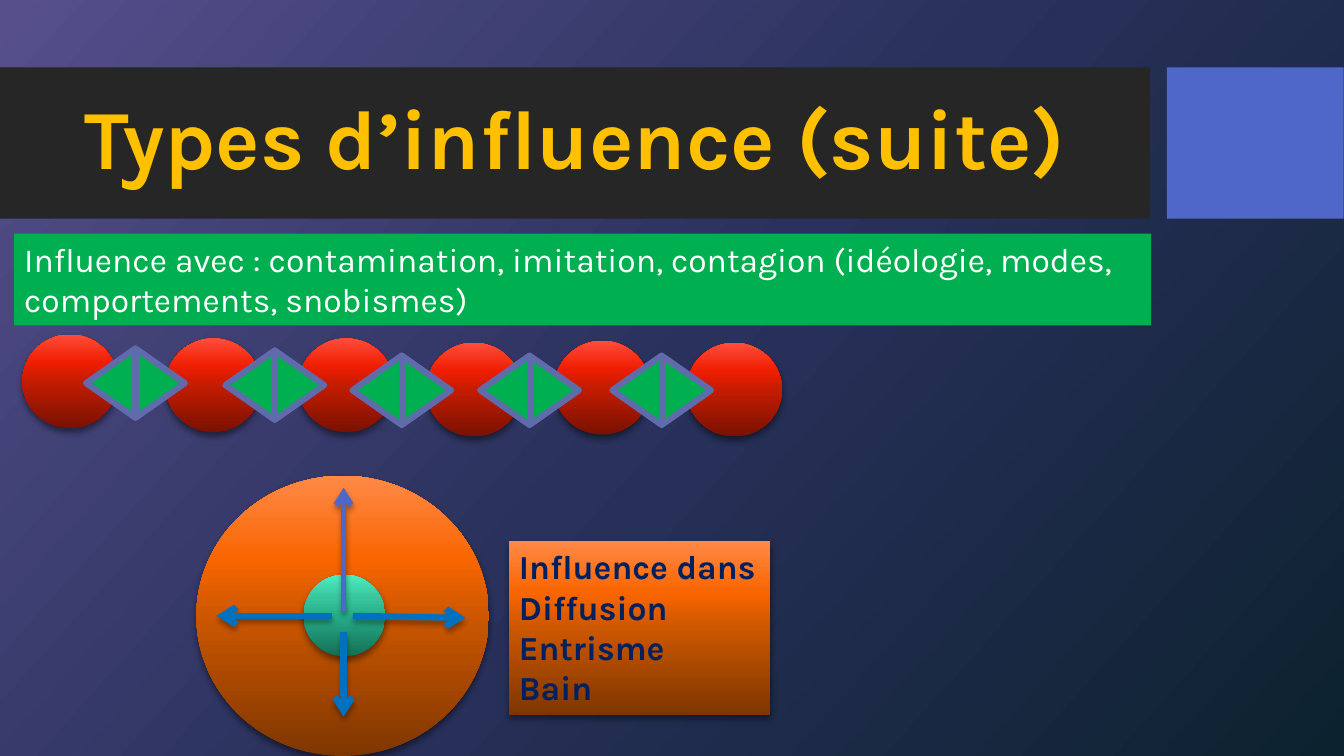
from lxml import etree
from pptx import Presentation
from pptx import util as u
from pptx.dml.color import RGBColor
from pptx.enum import shapes, text
from pptx.oxml import ns

FONT = "Karla"
TITLE = "Types d’influence (suite)"
CHAIN_TEXT = ["Influence avec : contamination, imitation, contagion "
              "(idéologie, modes, comportements, snobismes)"]
SPREAD_TEXT = ["Influence dans", "Diffusion", "Entrisme", "Bain"]

BACKDROP = [(0, "564F8C"), (50, "29315C"), (100, "0D222F")]
RED = [(0, "791100"), (50, "C41C00"), (70, "EF1D00"), (100, "FF4D3B")]
ORANGE = [(0, "7E3600"), (50, "CC5700"), (70, "F96500"), (100, "FF8947")]
TEAL = [(0, "156E56"), (50, "26AE88"), (70, "37C49D"), (100, "50ECBF")]

BANDS = [((0, 1.7, 28.98, 3.81), "262626"), ((29.41, 1.7, 4.45, 3.81), "4E67C8")]
PEOPLE = [(0.56, 8.43), (4.17, 8.53), (7.52, 8.53),
          (10.74, 8.64), (13.97, 8.59), (17.3, 8.64)]
EXCHANGES = [(2.54, 8.41), (6.05, 8.46), (9.25, 8.59), (12.47, 8.59), (15.8, 8.59)]
PERSON_SIZE = (2.41, 2.36)
EXCHANGE_SIZE = (1.75, 2.49)
ARROWS = [
    ((8.89, 15.52), (11.73, 15.57), "0070C0", 4.5),
    ((8.66, 15.93), (8.66, 18.06), "0070C0", 4.5),
    ((8.36, 15.52), (5.46, 15.52), "0070C0", 4.5),
    ((8.66, 15.39), (8.66, 12.29), "4E67C8", 4),
]
KIND = shapes.MSO_SHAPE


def cm(values):
    return [u.Cm(value) for value in values]


def paint(color_format, color):
    color_format.rgb = RGBColor.from_string(color)


def add_child(parent, tag, **attributes):
    child = etree.SubElement(parent, ns.qn(tag))
    for name, value in attributes.items():
        child.set(name, str(value))
    return child


def set_fill(fill, holder, color, angle=270):
    fill.solid()
    if isinstance(color, str):
        paint(fill.fore_color, color)
        return
    solid = holder.find(ns.qn("a:solidFill"))
    gradient = etree.Element(ns.qn("a:gradFill"), rotWithShape="1")
    stops = add_child(gradient, "a:gsLst")
    for position, stop_color in color:
        stop = add_child(stops, "a:gs", pos=position * 1000)
        add_child(stop, "a:srgbClr", val=stop_color)
    add_child(gradient, "a:lin", ang=angle * 60000, scaled=0)
    holder.replace(solid, gradient)


def add_shadow(effects, opacity, blur, distance):
    shadow = add_child(effects, "a:outerShdw", blurRad=u.Pt(blur), dist=u.Pt(distance),
                       dir=90 * 60000, rotWithShape=0)
    color = add_child(shadow, "a:srgbClr", val="000000")
    add_child(color, "a:alpha", val=opacity * 1000)


def add_figure(page, kind, place, color):
    shape = page.shapes.add_shape(kind, *cm(place))
    properties = shape._element.spPr
    set_fill(shape.fill, properties, color)
    shape.line.fill.background()
    shape.shadow.inherit = False
    if not isinstance(color, str):
        add_shadow(properties.find(ns.qn("a:effectLst")), 45, 5, 3)
    return shape


def add_arrow(page, start, end, color, width):
    arrow = page.shapes.add_connector(shapes.MSO_CONNECTOR.STRAIGHT, *cm(start + end))
    paint(arrow.line.color, color)
    arrow.line.width = u.Pt(width)
    add_child(arrow.line._get_or_add_ln(), "a:tailEnd", type="arrow")
    add_shadow(add_child(arrow._element.spPr, "a:effectLst"), 35, 4, 3)


def write(box, lines, size, color, bold=False, anchor=text.MSO_ANCHOR.TOP,
          wrap=True, spacing=1.0):
    frame = box.text_frame
    frame.word_wrap = wrap
    frame.vertical_anchor = anchor
    for index, line in enumerate(lines):
        para = frame.add_paragraph() if index else frame.paragraphs[0]
        para.alignment = text.PP_ALIGN.LEFT
        para.line_spacing = spacing
        span = para.add_run()
        span.text = line
        span.font.name = FONT
        span.font.size = u.Pt(size)
        span.font.bold = bold
        paint(span.font.color, color)


def main():
    deck = Presentation()
    deck.slide_width, deck.slide_height = cm((33.87, 19.05))
    page = deck.slides.add_slide(deck.slide_layouts[6])

    backdrop = page.background.fill
    backdrop.solid()
    set_fill(backdrop, page._element.find(".//" + ns.qn("p:bgPr")), BACKDROP, 42)

    for place, color in BANDS:
        add_figure(page, KIND.RECTANGLE, place, color)
    title = page.shapes.add_textbox(*cm((1.88, 2.08, 26.7, 3)))
    write(title, [TITLE], 60, "FFC000", True, text.MSO_ANCHOR.MIDDLE, spacing=0.9)

    for corner in PEOPLE:
        add_figure(page, KIND.OVAL, corner + PERSON_SIZE, RED)
    for corner in EXCHANGES:
        exchange = add_figure(page, KIND.FLOWCHART_SORT, corner + EXCHANGE_SIZE, "00B050")
        exchange.rotation = 90
        paint(exchange.line.color, "606BAC")
        exchange.line.width = u.Pt(4.33)

    chain_box = add_figure(page, KIND.RECTANGLE, (0.36, 5.89, 28.65, 2.31), "00B050")
    write(chain_box, CHAIN_TEXT, 24, "FFFFFF")

    add_figure(page, KIND.OVAL, (4.95, 11.99, 7.37, 7.06), ORANGE)
    add_figure(page, KIND.OVAL, (7.65, 14.48, 2.06, 2.06), TEAL)
    for arrow in ARROWS:
        add_arrow(page, *arrow)
    spread_box = add_figure(page, KIND.RECTANGLE, (12.83, 13.64, 6.58, 4.37), ORANGE)
    write(spread_box, SPREAD_TEXT, 24, "002060", True, wrap=False)

    deck.save("out.pptx")


if __name__ == "__main__":
    main()
